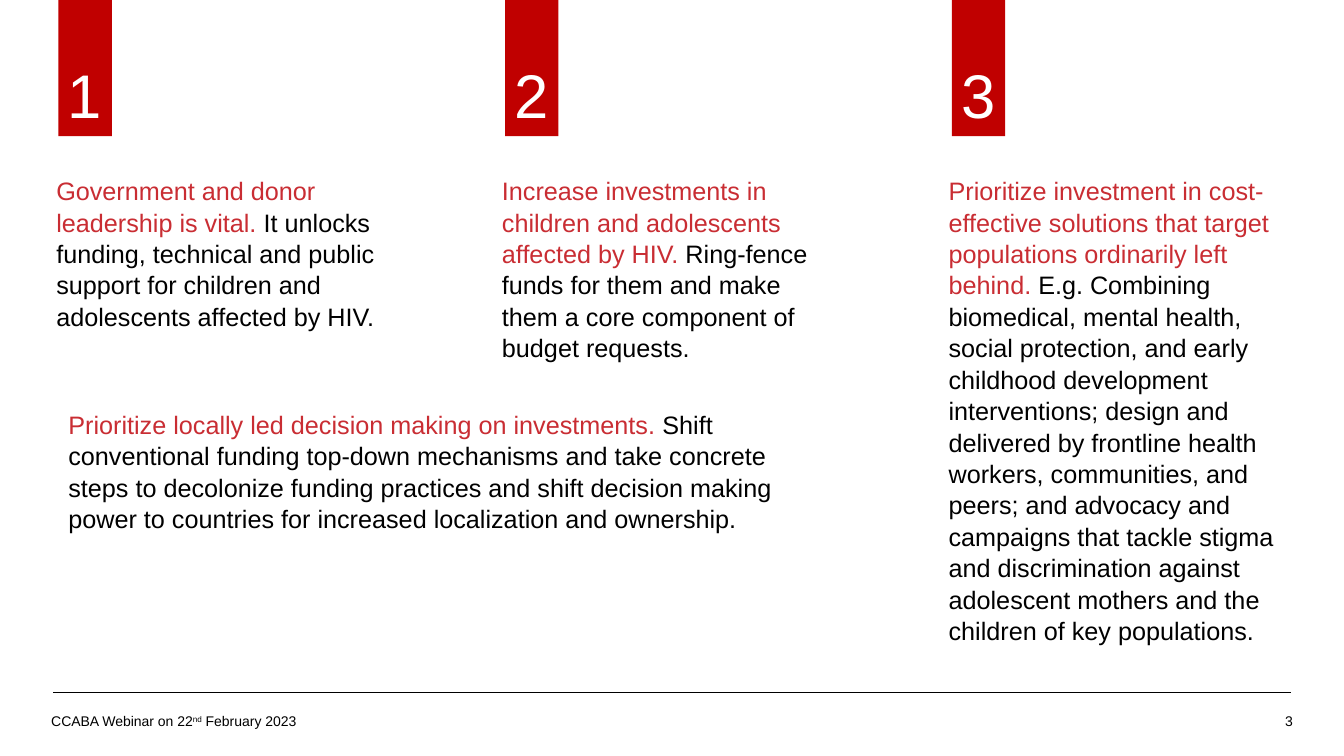
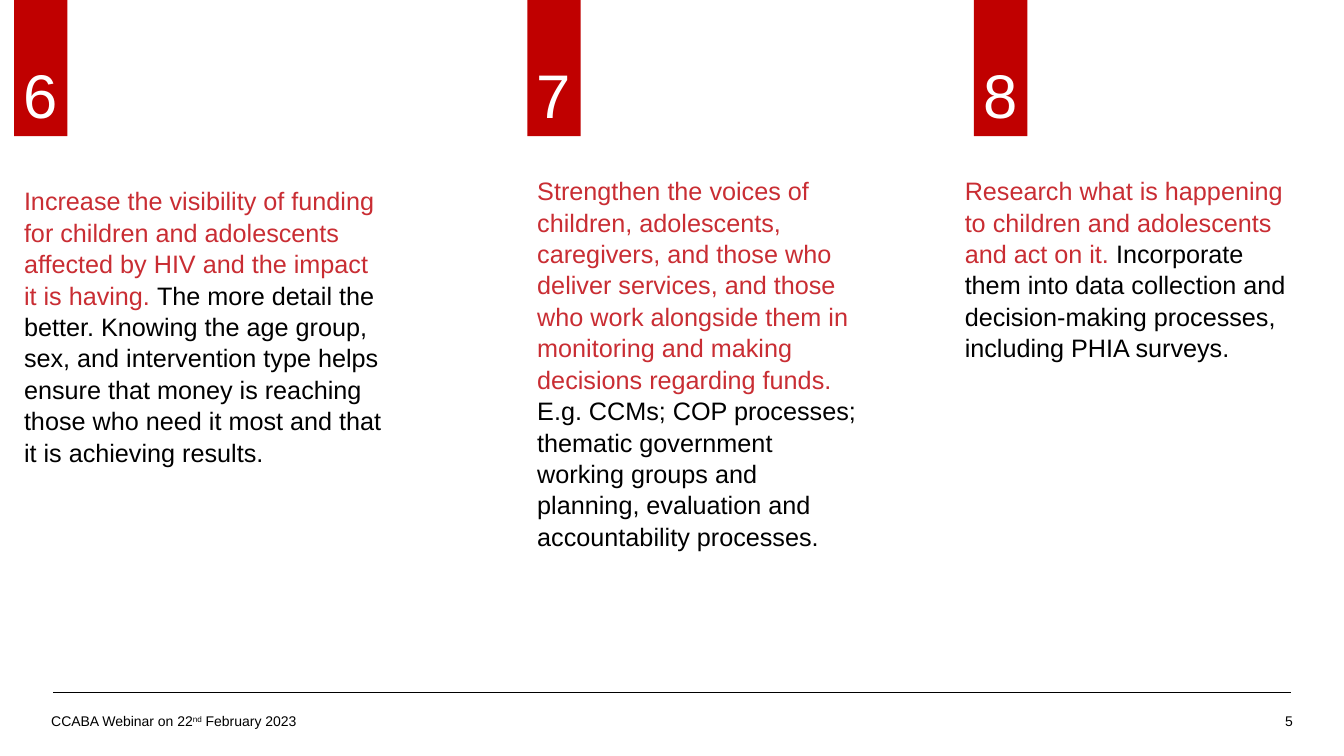
from lxml import etree
from pptx import Presentation
from pptx import util as u
from pptx.dml.color import RGBColor
from pptx.enum import shapes, text
from pptx.oxml.ns import qn

EMU_PER_PX = 9144
FONT = "Arial"
RED, CRIMSON, BLACK, WHITE = "C00000", "C92D33", "000000", "FFFFFF"
BODY_SIZE, FOOTER_SIZE, NUMBER_SIZE = 18, 10, 44
BAR_WIDTH, BAR_HEIGHT = 53, 135
COLUMN_PITCH = 443
TEXT_TOP, TEXT_WIDTH = 168, 345

OPENING_SLIDE = {
    "page": "3",
    "bars": [(str(index + 1), 58 + index * COLUMN_PITCH) for index in range(3)],
    "messages": [
        ((46, TEXT_TOP, TEXT_WIDTH, 162),
         "Government and donor leadership is vital. ",
         "It unlocks funding, technical and public support for children and "
         "adolescents affected by HIV."),
        ((488, TEXT_TOP, TEXT_WIDTH, 192),
         "Increase investments in children and adolescents affected by HIV.",
         " Ring-fence funds for them and make them a core component of budget requests."),
        ((931, TEXT_TOP, TEXT_WIDTH, 464),
         "Prioritize investment in cost-effective solutions that target populations "
         "ordinarily left behind.",
         " E.g. Combining biomedical, mental health, social protection, and early "
         "childhood development interventions; design and delivered by frontline health "
         "workers, communities, and peers; and advocacy and campaigns that tackle stigma "
         "and discrimination against adolescent mothers and the children of key populations."),
        ((58, 400, 737, 131),
         "Prioritize locally led decision making on investments. ",
         "Shift conventional funding top-down mechanisms and take concrete steps to "
         "decolonize funding practices and shift decision making power to countries for "
         "increased localization and ownership."),
    ],
}

CLOSING_SLIDE = {
    "page": "5",
    "bars": [("6", 14), ("7", 523), ("8", 523 + COLUMN_PITCH)],
    "messages": [
        ((14, 178, 376, 283),
         "Increase the visibility of funding for children and adolescents affected by HIV "
         "and the impact it is having. ",
         "The more detail the better. Knowing the age group, sex, and intervention type "
         "helps ensure that money is reaching those who need it most and that it is "
         "achieving results."),
        ((523, TEXT_TOP, TEXT_WIDTH, 374),
         "Strengthen the voices of children, adolescents, caregivers, and those who deliver "
         "services, and those who work alongside them in monitoring and making decisions "
         "regarding funds. \n",
         "E.g. CCMs; COP processes; thematic government working groups and planning, "
         "evaluation and accountability processes."),
        ((947, TEXT_TOP, TEXT_WIDTH, 192),
         "Research what is happening to children and adolescents and act on it.",
         " Incorporate them into data collection and decision-making processes, including "
         "PHIA surveys."),
    ],
}


def px(length):
    return u.Emu(length * EMU_PER_PX)


def color(value):
    return RGBColor.from_string(value)


def add_run(paragraph, content, size, fill):
    run = paragraph.add_run()
    run.text = content
    run.font.name = FONT
    run.font.size = u.Pt(size)
    run.font.color.rgb = color(fill)
    return run


def add_text_box(slide, box):
    frame = slide.shapes.add_textbox(*map(px, box)).text_frame
    frame.word_wrap = True
    return frame


def add_number_bar(slide, number, left):
    bar = slide.shapes.add_shape(
        shapes.MSO_SHAPE.RECTANGLE, px(left), px(0), px(BAR_WIDTH), px(BAR_HEIGHT))
    bar.shadow.inherit = False
    bar.fill.solid()
    bar.fill.fore_color.rgb = color(RED)
    bar.line.fill.background()
    frame = bar.text_frame
    frame.word_wrap = False
    frame.vertical_anchor = text.MSO_ANCHOR.BOTTOM
    paragraph = frame.paragraphs[0]
    paragraph.alignment = text.PP_ALIGN.CENTER
    add_run(paragraph, number, NUMBER_SIZE, WHITE)


def add_message(slide, box, lead, detail):
    frame = add_text_box(slide, box)
    frame.auto_size = text.MSO_AUTO_SIZE.SHAPE_TO_FIT_TEXT
    paragraph = frame.paragraphs[0]
    paragraph.line_spacing = 1.04
    add_run(paragraph, lead.rstrip("\n"), BODY_SIZE, CRIMSON)
    if lead.endswith("\n"):
        paragraph.add_line_break()
    add_run(paragraph, detail, BODY_SIZE, BLACK)


def add_footer_text(slide, left, alignment):
    frame = add_text_box(slide, (left, 695, 300, 40))
    frame.vertical_anchor = text.MSO_ANCHOR.MIDDLE
    paragraph = frame.paragraphs[0]
    paragraph.alignment = alignment
    return paragraph


def add_footer(slide, page):
    rule = slide.shapes.add_connector(
        shapes.MSO_CONNECTOR.STRAIGHT, px(53), px(687), px(1280), px(687))
    rule.line.color.rgb = color(BLACK)
    rule.line.width = u.Pt(0.5)
    etree.SubElement(rule._element.spPr, qn("a:effectLst"))

    event = add_footer_text(slide, 41, text.PP_ALIGN.LEFT)
    add_run(event, "CCABA Webinar on 22", FOOTER_SIZE, BLACK)
    ordinal = add_run(event, "nd", FOOTER_SIZE, BLACK)
    ordinal.font._element.set("baseline", "30000")
    add_run(event, " February 2023", FOOTER_SIZE, BLACK)

    add_run(add_footer_text(slide, 992, text.PP_ALIGN.RIGHT), page, FOOTER_SIZE, BLACK)


def add_recommendations(presentation, content):
    slide = presentation.slides.add_slide(presentation.slide_layouts[6])
    add_footer(slide, content["page"])
    for number, left in content["bars"]:
        add_number_bar(slide, number, left)
    for box, lead, detail in content["messages"]:
        add_message(slide, box, lead, detail)


def main():
    presentation = Presentation()
    presentation.slide_width = px(1333)
    presentation.slide_height = px(750)
    for content in (OPENING_SLIDE, CLOSING_SLIDE):
        add_recommendations(presentation, content)
    presentation.save("out.pptx")


if __name__ == "__main__":
    main()
